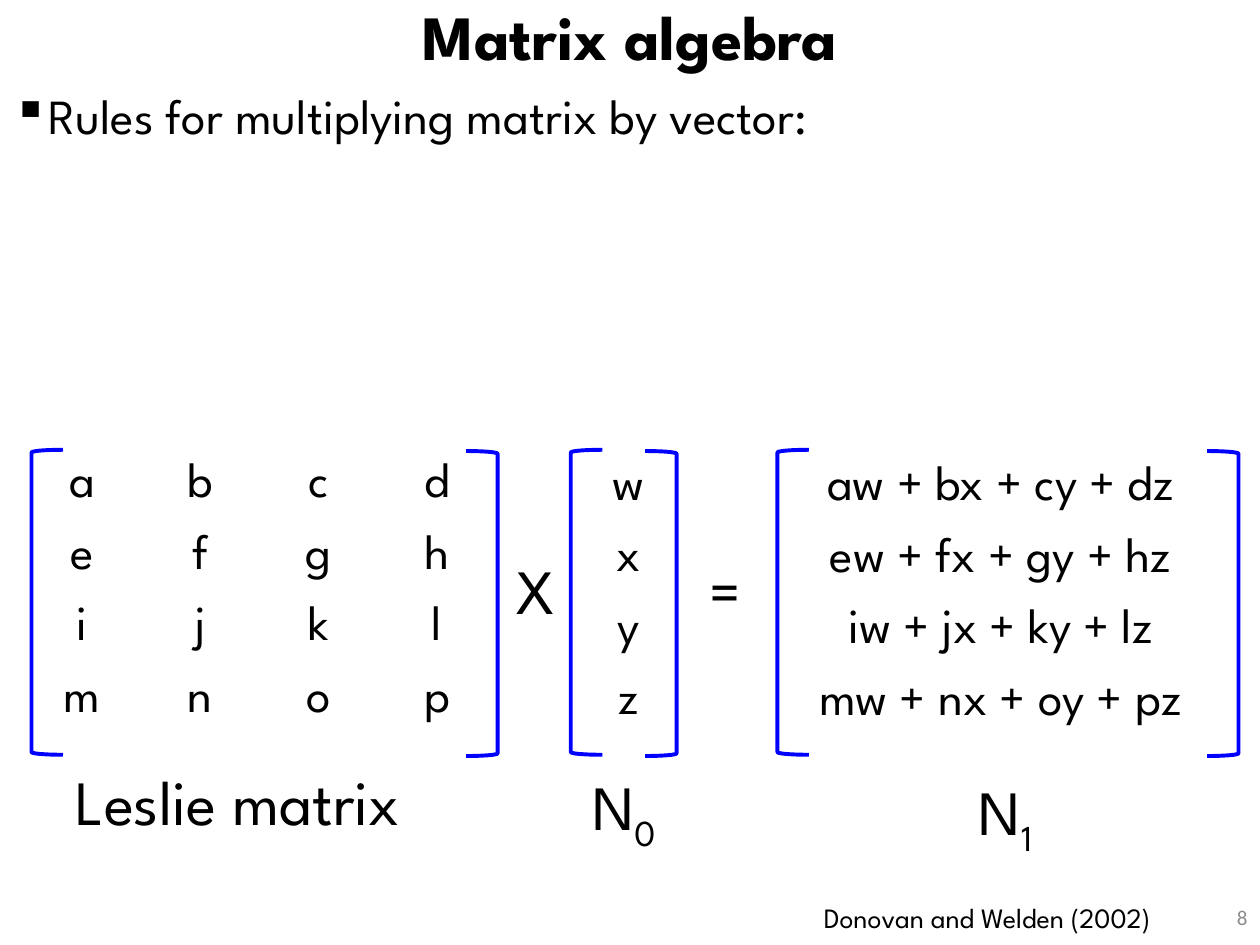
import pptx
import pptx.util
import pptx.dml.color
import pptx.enum.shapes
import pptx.enum.text
import pptx.oxml.ns
from lxml import etree

Inches = pptx.util.Inches
Pt = pptx.util.Pt
Align = pptx.enum.text.PP_ALIGN
Anchor = pptx.enum.text.MSO_ANCHOR
COLORS = {"ink": "000000", "line": "0000FF", "page": "8C8C8C"}
FACE = "League Spartan"
PLAIN = "{2D5ABB26-0587-4C30-8999-92F81FD0307C}"


def color(name):
    return pptx.dml.color.RGBColor.from_string(COLORS[name])


def style(para, size, align=Align.LEFT, bold=False, face=FACE, ink="ink"):
    para.alignment = align
    font = para.font
    font.size, font.name, font.bold = Pt(size), face, bold
    font.color.rgb = color(ink)


def add_text(slide, box, text, size, wrap=False, anchor=Anchor.TOP, **look):
    shape = slide.shapes.add_textbox(*map(Inches, box))
    frame = shape.text_frame
    frame.word_wrap = wrap
    frame.vertical_anchor = anchor
    if not wrap:
        frame.auto_size = pptx.enum.text.MSO_AUTO_SIZE.SHAPE_TO_FIT_TEXT
    para = frame.paragraphs[0]
    para.add_run().text = text
    style(para, size, **look)
    return para


def add_bullet(para):
    props = para._p.get_or_add_pPr()
    props.set("marL", str(Inches(0.25)))
    props.set("indent", str(-Inches(0.25)))
    mark = etree.SubElement(props, pptx.oxml.ns.qn("a:buChar"))
    mark.set("char", "▪")
    props.remove(mark)
    props.insert_element_before(mark, "a:tabLst", "a:defRPr", "a:extLst")


def add_symbol(slide, left, top, index):
    para = add_text(slide, (left, top, 0.79, 0.71), "N", 36)
    sub = para.add_run()
    sub.text = index
    sub.font._element.set("baseline", "-25000")


def add_grid(slide, left, top, width, height, rows):
    cols = len(rows[0])
    frame = slide.shapes.add_table(
        len(rows), cols, Inches(left), Inches(top),
        Inches(width * cols), Inches(height * len(rows)))
    table = frame.table
    table.first_row = table.horz_banding = False
    table._tbl.tblPr.find(pptx.oxml.ns.qn("a:tableStyleId")).text = PLAIN
    for r, row in enumerate(rows):
        table.rows[r].height = Inches(height)
        for c, text in enumerate(row):
            cell = table.cell(r, c)
            cell.fill.background()
            cell.text = text
            style(cell.text_frame.paragraphs[0], 28, Align.CENTER)


def add_bracket(slide, left, top, flip=False):
    shape = slide.shapes.add_shape(
        pptx.enum.shapes.MSO_SHAPE.LEFT_BRACKET,
        Inches(left), Inches(top), Inches(0.25), Inches(2.42))
    shape.shadow.inherit = False
    shape.fill.background()
    shape.line.color.rgb = color("line")
    shape.line.width = Pt(2.25)
    if flip:
        shape._element.spPr.xfrm.set("flipH", "1")


def add_pair(slide, left, right):
    add_bracket(slide, left, 3.57)
    add_bracket(slide, right, 3.58, True)


def main():
    deck = pptx.Presentation()
    deck.slide_width, deck.slide_height = Inches(10), Inches(7.5)
    slide = deck.slides.add_slide(deck.slide_layouts[6])

    title = add_text(slide, (0, 0.01, 10, 0.62), "Matrix algebra", 36,
                     wrap=True, anchor=Anchor.MIDDLE,
                     align=Align.CENTER, bold=True)
    title.line_spacing = 0.9
    rule = add_text(slide, (0, 0.68, 10, 5.67),
                    "Rules for multiplying matrix by vector:", 28, wrap=True)
    rule.line_spacing = 0.9
    rule.space_before = Pt(10)
    add_bullet(rule)

    matrix = ["abcd", "efgh", "ijkl", "mnop"]
    vector = "wxyz"
    sums = [[" + ".join(a + b for a, b in zip(row, vector))]
            for row in matrix]
    add_grid(slide, 0.18, 3.63, 0.94, 0.41, matrix)
    add_pair(slide, 0.25, 3.7)
    add_grid(slide, 4.52, 3.65, 0.94, 0.41, vector)
    add_pair(slide, 4.53, 5.12)
    add_grid(slide, 6.17, 3.65, 3.54, 0.57, sums)
    add_pair(slide, 6.17, 9.58)

    for left, sign in ((4, "X"), (5.53, "=")):
        add_text(slide, (left, 4.33, 0.51, 0.71), sign, 36)
    add_symbol(slide, 4.6, 6.04, "0")
    add_symbol(slide, 7.67, 6.08, "1")
    add_text(slide, (0.5, 6, 3.31, 0.71), "Leslie matrix", 36)
    add_text(slide, (7.75, 7.08, 2.25, 0.4), "8", 12, wrap=True,
             anchor=Anchor.MIDDLE, align=Align.RIGHT,
             face="Calibri", ink="page")
    add_text(slide, (6.44, 7.1, 3.23, 0.37), "Donovan and Welden (2002)", 16)
    deck.save("out.pptx")


if __name__ == "__main__":
    main()
